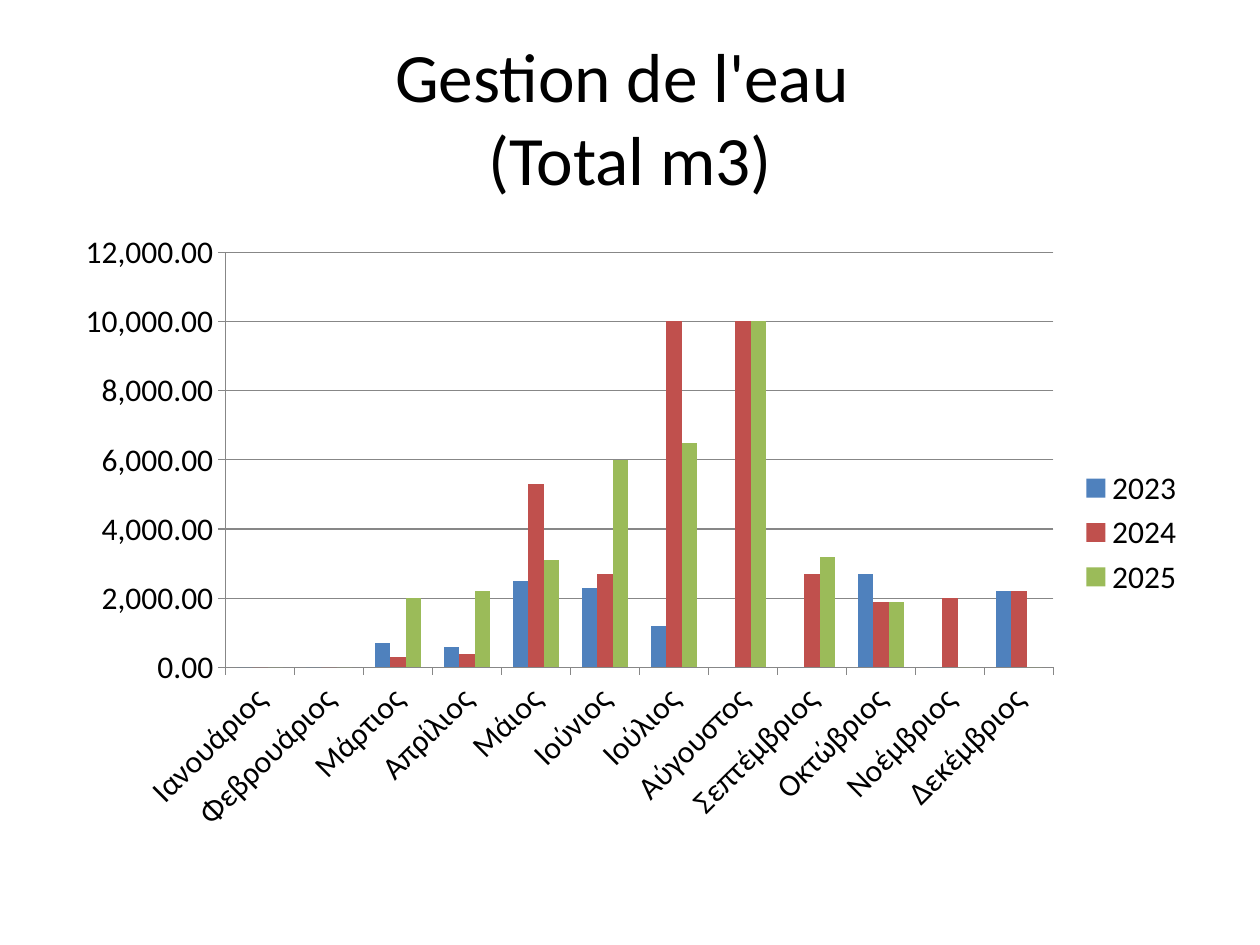
import pptx
import pptx.chart.data
import pptx.dml.color
import pptx.enum.chart
import pptx.enum.text
import pptx.util
from pptx.util import Cm

MONTHS = ["Ιανουάριος", "Φεβρουάριος", "Μάρτιος", "Απρίλιος", "Μάιος", "Ιούνιος",
          "Ιούλιος", "Αύγουστος", "Σεπτέμβριος", "Οκτώβριος", "Νοέμβριος", "Δεκέμβριος"]
WATER = [
    ("2023", "4F81BD", [0, 0, 700, 600, 2500, 2300, 1200, 0, 0, 2700, 0, 2200]),
    ("2024", "C0504D", [0, 0, 300, 400, 5300, 2700, 10000, 10000, 2700, 1900, 2000, 2200]),
    ("2025", "9BBB59", [0, 0, 2000, 2200, 3100, 6000, 6500, 10000, 3200, 1900, 0, 0]),
]


def rgb(hex_color):
    return pptx.dml.color.RGBColor.from_string(hex_color)


class Deck:
    """Style and current slide."""
    font_name = "Calibri"
    text_color = "000000"
    line_color = "878787"

    def __init__(self, width, height):
        self.prs = pptx.Presentation()
        self.prs.slide_width, self.prs.slide_height = width, height
        self.s = self.prs.slides.add_slide(self.prs.slide_layouts[6])

    def set_font(self, font, size):
        font.name = self.font_name
        font.size = pptx.util.Pt(size)
        font.color.rgb = rgb(self.text_color)

    def title(self, text, box, size):
        tf = self.s.shapes.add_textbox(*box).text_frame
        tf.word_wrap = True
        tf.vertical_anchor = pptx.enum.text.MSO_ANCHOR.MIDDLE
        p = tf.paragraphs[0]
        p.text = text
        p.alignment = pptx.enum.text.PP_ALIGN.CENTER
        self.set_font(p.font, size)

    def line(self, fmt):
        fmt.line.color.rgb = rgb(self.line_color)
        fmt.line.width = pptx.util.Pt(0.75)

    def column_chart(self, categories, series, box, size):
        data = pptx.chart.data.CategoryChartData(number_format="#,##0.00")
        data.categories = categories
        for name, _, values in series:
            data.add_series(name, values)
        kind = pptx.enum.chart.XL_CHART_TYPE.COLUMN_CLUSTERED
        chart = self.s.shapes.add_chart(kind, *box, data).chart
        self.set_font(chart.font, size)
        chart.has_title = False
        chart.has_legend = True
        chart.legend.position = pptx.enum.chart.XL_LEGEND_POSITION.RIGHT
        chart.legend.include_in_layout = False

        plot = chart.plots[0]
        plot.gap_width, plot.overlap = 150, 0
        plot.vary_by_categories = False
        for bars, (_, color, _) in zip(plot.series, series):
            bars.format.fill.solid()
            bars.format.fill.fore_color.rgb = rgb(color)
            bars.invert_if_negative = False

        for axis in (chart.category_axis, chart.value_axis):
            axis.major_tick_mark = pptx.enum.chart.XL_TICK_MARK.OUTSIDE
            self.line(axis.format)
        chart.value_axis.has_major_gridlines = True
        self.line(chart.value_axis.major_gridlines.format)
        labels = chart.value_axis.tick_labels
        labels.number_format, labels.number_format_is_linked = "#,##0.00", False


def main():
    deck = Deck(Cm(25.4), Cm(19.05))
    deck.title("Gestion de l'eau \v(Total m3)",
               (Cm(1.27), Cm(0.76), Cm(22.86), Cm(3.18)), 39.6)
    deck.column_chart(MONTHS, WATER,
                      (Cm(1.27), Cm(4.45), Cm(22.86), Cm(12.57)), 18)
    deck.prs.save("out.pptx")


if __name__ == "__main__":
    main()
